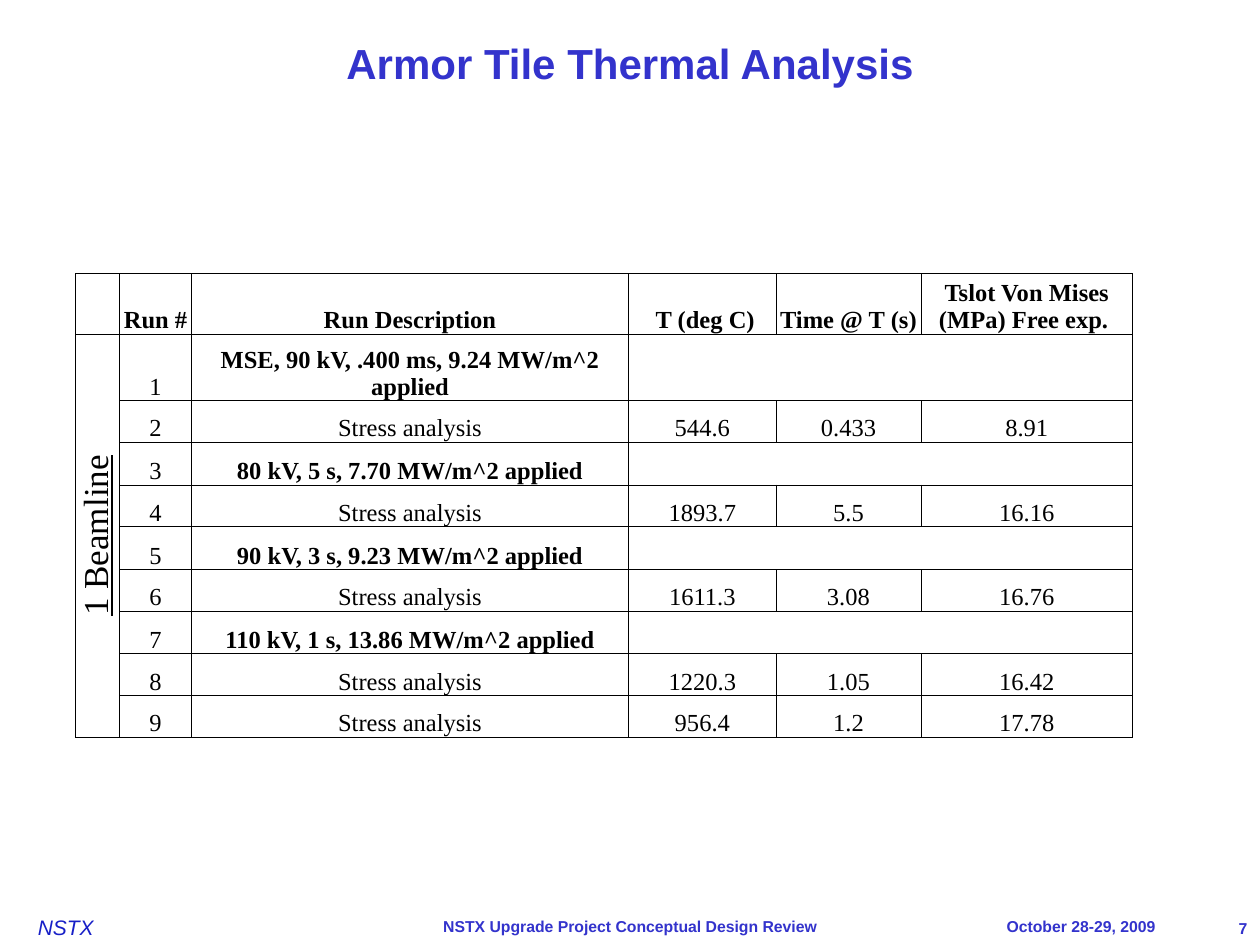
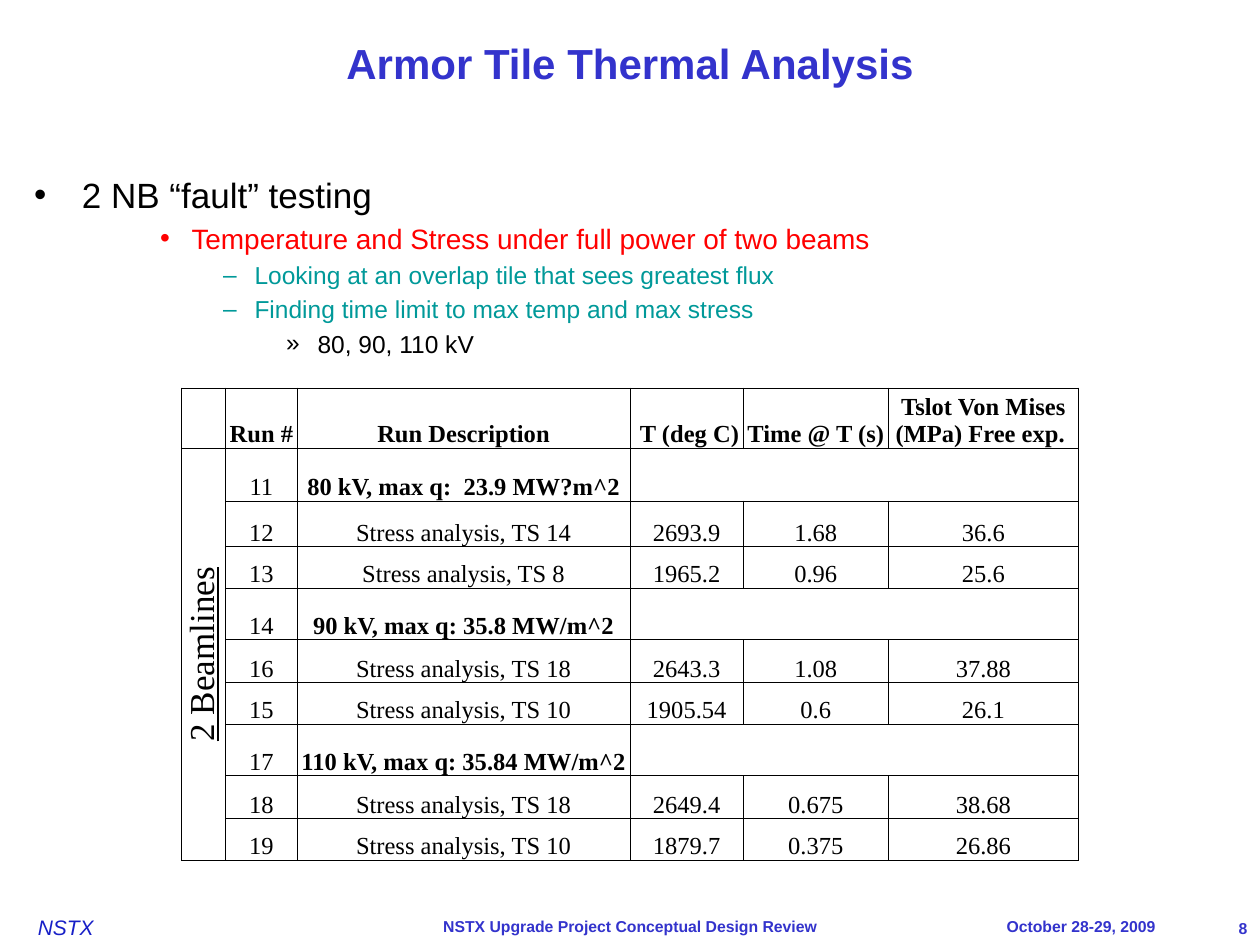
from lxml.etree import SubElement
from pptx import Presentation
from pptx.dml.color import RGBColor
from pptx.enum.text import MSO_ANCHOR, MSO_AUTO_SIZE, PP_ALIGN
from pptx.oxml import parse_xml
from pptx.oxml.ns import nsdecls, qn
from pptx.util import Inches, Pt

BLUE, NAVY, BLACK, RED, TEAL = "3333CC", "171FC7", "000000", "FF0000", "009999"


def style(paragraph, size, color, face="Arial", bold=False, italic=False, underline=False):
    for run in paragraph.runs:
        font = run.font
        font.name, font.size = face, Pt(size)
        font.bold, font.italic, font.underline = bold, italic, underline
        font.color.rgb = RGBColor.from_string(color)


# Shared footer: text, box, anchor, alignment, size, colour, bold, italic
FOOTER = [
    ("NSTX", (0.3, 7.26, 0.59, 0.2), MSO_ANCHOR.TOP, PP_ALIGN.LEFT, 12, NAVY, False, True),
    ("NSTX Upgrade Project Conceptual Design Review", (2.25, 7.2, 5.5, 0.3),
     MSO_ANCHOR.MIDDLE, PP_ALIGN.CENTER, 9, BLUE, True, False),
    ("October 28-29, 2009", (7, 7.2, 2.17, 0.3),
     MSO_ANCHOR.MIDDLE, PP_ALIGN.RIGHT, 9, BLUE, True, False),
]

# Outline: text, level, left margin, hanging indent, bullet, size, colour
FAULT_TESTING = [
    ("2 NB “fault” testing", 0, 0.38, 0.38, "•", 20, BLACK),
    ("Temperature and Stress under full power of two beams", 2, 1.25, 0.25, "•", 16, RED),
    ("Looking at an overlap tile that sees greatest flux", 3, 1.75, 0.25, "–", 14, TEAL),
    ("Finding time limit to max temp and max stress", 3, 1.75, 0.25, "–", 14, TEAL),
    ("80, 90, 110 kV", 4, 2.25, 0.25, "»", 14, BLACK),
]

# Run tables: a run with no results is a load case, shown bold
HEADINGS = ("Run #", "Run Description", " T (deg C)", "Time @ T (s)",
            "Tslot Von Mises (MPa) Free exp. ")
ONE_BEAMLINE = [
    ("1", "MSE, 90 kV, .400 ms, 9.24 MW/m^2 applied"),
    ("2", "Stress analysis", "544.6", "0.433", "8.91"),
    ("3", "80 kV, 5 s, 7.70 MW/m^2 applied"),
    ("4", "Stress analysis", "1893.7", "5.5", "16.16"),
    ("5", "90 kV, 3 s, 9.23 MW/m^2 applied"),
    ("6", "Stress analysis", "1611.3", "3.08", "16.76"),
    ("7", "110 kV, 1 s, 13.86 MW/m^2 applied"),
    ("8", "Stress analysis", "1220.3", "1.05", "16.42"),
    ("9", "Stress analysis", "956.4", "1.2", "17.78"),
]
TWO_BEAMLINES = [
    ("11", "80 kV, max q:  23.9 MW?m^2"),
    ("12", "Stress analysis, TS 14", "2693.9", "1.68", "36.6"),
    ("13", "Stress analysis, TS 8", "1965.2", "0.96", "25.6"),
    ("14", "90 kV, max q: 35.8 MW/m^2"),
    ("16", "Stress analysis, TS 18", "2643.3", "1.08", "37.88"),
    ("15", "Stress analysis, TS 10", "1905.54", "0.6", "26.1"),
    ("17", "110 kV, max q: 35.84 MW/m^2"),
    ("18", "Stress analysis, TS 18", "2649.4", "0.675", "38.68"),
    ("19", "Stress analysis, TS 10", "1879.7", "0.375", "26.86"),
]

# Slides: number, outline, beamline label, runs, table corner, column widths, row heights
SLIDES = [
    (7, [], "1 Beamline", ONE_BEAMLINE, (0.6, 2.17),
     (0.35, 0.57, 3.47, 1.17, 1.15, 1.68),
     (0.48, 0.53, 0.33, 0.34, 0.33, 0.34, 0.33, 0.34, 0.33, 0.33)),
    (8, FAULT_TESTING, "2 Beamlines", TWO_BEAMLINES, (1.44, 3.08),
     (0.35, 0.57, 2.64, 0.9, 1.15, 1.51),
     (0.44, 0.42, 0.36, 0.33, 0.41, 0.34, 0.33, 0.41, 0.34, 0.33)),
]

prs = Presentation()
prs.slide_width, prs.slide_height = Inches(10), Inches(7.5)

for number, outline, beamline, runs, corner, widths, heights in SLIDES:
    slide = prs.slides.add_slide(prs.slide_layouts[1 if outline else 5])

    # Title
    title = slide.shapes.title
    title.left, title.top, title.width, title.height = map(Inches, (0, 0, 10, 1))
    title.text_frame.text = "Armor Tile Thermal Analysis"
    title.text_frame.vertical_anchor = MSO_ANCHOR.MIDDLE
    title.text_frame.paragraphs[0].alignment = PP_ALIGN.CENTER
    style(title.text_frame.paragraphs[0], 24, BLUE, bold=True)

    # Footer and slide number
    page = (str(number), (9.17, 7.28, 0.73, 0.17), MSO_ANCHOR.MIDDLE,
            PP_ALIGN.RIGHT, 9, BLUE, True, False)
    for text, box, anchor, align, size, color, bold, italic in FOOTER + [page]:
        frame = slide.shapes.add_textbox(*map(Inches, box)).text_frame
        frame.margin_left = frame.margin_right = frame.margin_top = frame.margin_bottom = 0
        frame.word_wrap = True
        frame.vertical_anchor = anchor
        frame.text = text
        frame.paragraphs[0].alignment = align
        style(frame.paragraphs[0], size, color, bold=bold, italic=italic)

    # Outline
    if outline:
        body = slide.placeholders[1]
        body.left, body.top, body.width, body.height = map(Inches, (0.17, 1.33, 9.58, 5.42))
        body.text_frame.auto_size = MSO_AUTO_SIZE.NONE
        body.text_frame.text = "\n".join(item[0] for item in outline)
        for paragraph, item in zip(body.text_frame.paragraphs, outline):
            _, level, margin, hanging, bullet, size, color = item
            props = paragraph._p.get_or_add_pPr()
            props.set("marL", str(Inches(margin)))
            props.set("indent", str(-Inches(hanging)))
            SubElement(props, qn("a:buFont")).set("typeface", "Arial")
            SubElement(props, qn("a:buChar")).set("char", bullet)
            paragraph.level = level
            paragraph.space_before = Pt(0.2 * size if level else 0)
            style(paragraph, size, color)

    # Run table grid
    frame = slide.shapes.add_table(len(heights), len(widths), *map(Inches, corner),
                                   Inches(sum(widths)), Inches(sum(heights)))
    table = frame.table
    table.first_row = table.horz_banding = False
    for column, width in zip(table.columns, widths):
        column.width = Inches(width)
    for row, height in zip(table.rows, heights):
        row.height = Inches(height)
    for cell in table.iter_cells():
        cell.margin_left = cell.margin_right = cell.margin_top = Inches(0.01)
        cell.margin_bottom = 0
        cell.vertical_anchor = MSO_ANCHOR.BOTTOM
        cell.fill.background()
        for position, side in enumerate(("lnL", "lnR", "lnT", "lnB")):
            border = parse_xml(
                f'<a:{side} {nsdecls("a")} w="{Pt(0.5)}"><a:solidFill>'
                f'<a:srgbClr val="{BLACK}"/></a:solidFill></a:{side}>')
            cell._tc.get_or_add_tcPr().insert(position, border)

    # Run table text
    for r, values in enumerate([HEADINGS] + runs):
        load_case = len(values) == 2
        for c, value in enumerate(values, start=1):
            cell = table.cell(r, c)
            cell.text_frame.text = value
            cell.text_frame.paragraphs[0].alignment = PP_ALIGN.CENTER
            style(cell.text_frame.paragraphs[0], 14, BLACK, "Times New Roman",
                  bold=r == 0 or (load_case and c == 2))
        if load_case:
            table.cell(r, 3).merge(table.cell(r, 5))

    # Beamline label down the left side
    label = table.cell(1, 0)
    label.merge(table.cell(len(runs), 0))
    label.vertical_anchor = MSO_ANCHOR.MIDDLE
    label._tc.get_or_add_tcPr().set("vert", "vert270")
    label.text_frame.text = beamline
    label.text_frame.paragraphs[0].alignment = PP_ALIGN.CENTER
    style(label.text_frame.paragraphs[0], 20, BLACK, "Times New Roman", underline=True)

prs.save("out.pptx")
